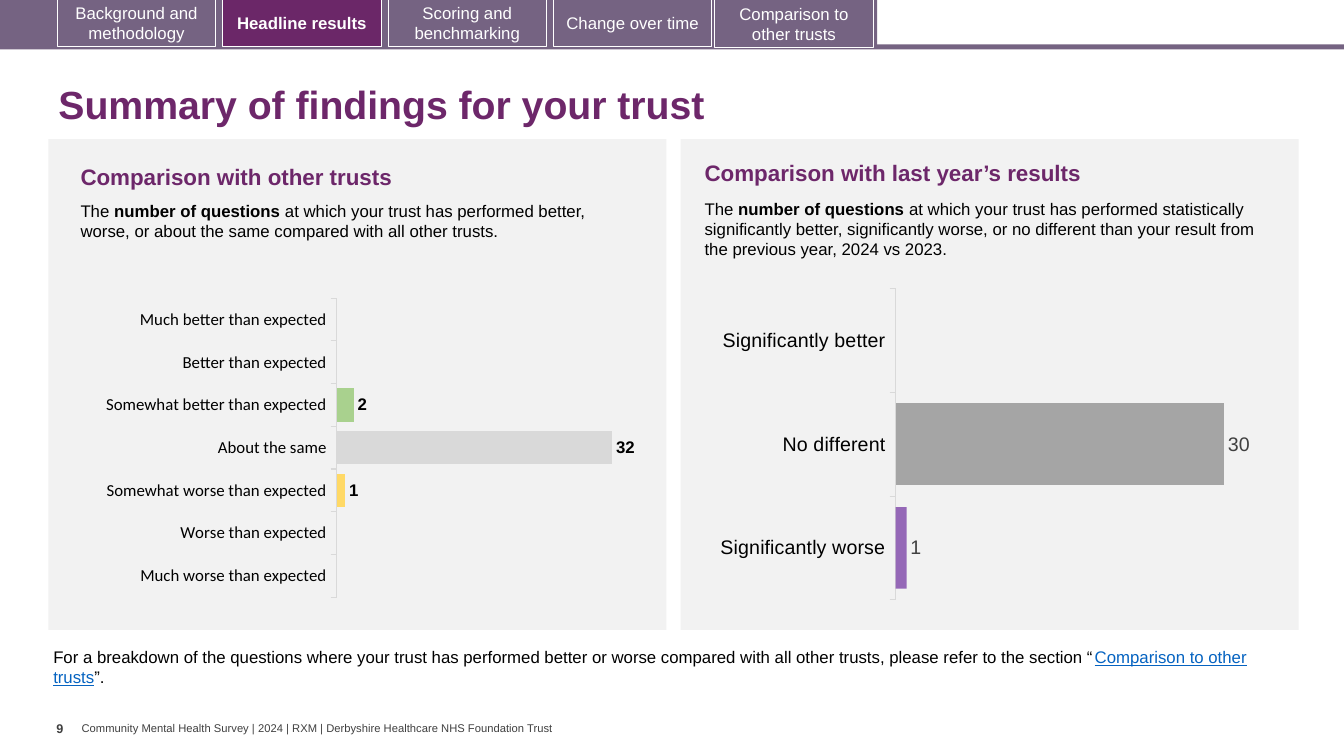
import pptx
import pptx.chart.data
import pptx.dml.color
import pptx.enum.chart
import pptx.enum.shapes
import pptx.enum.text
import pptx.util
from lxml import etree

Inches = pptx.util.Inches
Pt = pptx.util.Pt
Anchor = pptx.enum.text.MSO_ANCHOR
Align = pptx.enum.text.PP_ALIGN

THEME = {
    "colors": {
        "plum": "6D276A", "active_tab": "6B2768", "tab": "756382", "panel": "F2F2F2",
        "text": "000000", "muted": "404040", "white": "FFFFFF", "link": "0563C1",
        "axis": "D9D9D9", "series": "4472C4",
    },
    "fonts": {
        "title": {"size": Pt(28), "bold": True, "color": "plum"},
        "heading": {"size": Pt(16), "bold": True, "color": "plum"},
        "body": {"size": Pt(12), "color": "text"},
        "strong": {"size": Pt(12), "bold": True, "color": "text"},
        "link": {"size": Pt(12), "underline": True, "color": "link"},
        "tab": {"size": Pt(12), "color": "white"},
        "active_tab": {"size": Pt(12), "bold": True, "color": "white"},
        "footer": {"size": Pt(8), "color": "muted"},
        "page": {"size": Pt(9), "bold": True, "color": "muted"},
        "calibri_axis": {"size": Pt(12), "name": "Calibri", "color": "text"},
        "large_axis": {"size": Pt(14), "color": "text"},
        "large_label": {"size": Pt(14), "color": "muted"},
    },
}


def set_values(target, values):
    for name, value in values.items():
        setattr(target, name, value)


class SlideBuilder:
    def __init__(self, presentation, theme):
        self.theme = theme
        self.slide = presentation.slides.add_slide(presentation.slide_layouts[5])

    def color(self, name):
        return pptx.dml.color.RGBColor.from_string(self.theme["colors"].get(name, name))

    def style(self, font, name):
        values = {"name": "Arial", "bold": False, **self.theme["fonts"][name]}
        font.color.rgb = self.color(values.pop("color"))
        set_values(font, values)

    def fill_text(self, frame, runs, align=Align.LEFT, spacing=None, **frame_values):
        set_values(frame, {"word_wrap": True, "vertical_anchor": Anchor.TOP, **frame_values})
        paragraph = frame.paragraphs[0]
        set_values(paragraph, {"alignment": align, "line_spacing": spacing})
        for text, font_name in runs:
            run = paragraph.add_run()
            run.text = text
            self.style(run.font, font_name)

    def title(self, box, text):
        shape = self.slide.shapes.title
        set_values(shape, dict(zip(("left", "top", "width", "height"), map(Inches, box))))
        self.fill_text(shape.text_frame, [(text, "title")], spacing=0.9,
                       vertical_anchor=Anchor.MIDDLE,
                       auto_size=pptx.enum.text.MSO_AUTO_SIZE.NONE)

    def text(self, box, runs, **frame_values):
        shape = self.slide.shapes.add_textbox(*map(Inches, box))
        self.fill_text(shape.text_frame, runs, **frame_values)

    def rectangle(self, box, fill, outline=None):
        shape = self.slide.shapes.add_shape(
            pptx.enum.shapes.MSO_SHAPE.RECTANGLE, *map(Inches, box))
        shape.shadow.inherit = False
        shape.fill.solid()
        shape.fill.fore_color.rgb = self.color(fill)
        if outline:
            shape.line.color.rgb = self.color(outline)
            shape.line.width = Pt(0.75)
        else:
            shape.line.fill.background()
        return shape

    def tab(self, left, top, label, active=False):
        style_name = "active_tab" if active else "tab"
        shape = self.rectangle((left, top, 1.57, 0.47), style_name, "white")
        self.fill_text(shape.text_frame, [(label, style_name)], Align.CENTER,
                       vertical_anchor=Anchor.MIDDLE)

    def bar_chart(self, box, bars, plot_box, axis_font, label_font):
        data = pptx.chart.data.CategoryChartData()
        data.categories = [category for category, *_ in bars]
        data.add_series("Series 1", [value for _, value, *_ in bars])
        chart = self.slide.shapes.add_chart(
            pptx.enum.chart.XL_CHART_TYPE.BAR_CLUSTERED, *map(Inches, box), data).chart
        set_values(chart, {"has_legend": False, "has_title": False})
        self.style(chart.font, axis_font)

        set_values(chart.value_axis, {
            "minimum_scale": 0, "maximum_scale": 35,
            "has_major_gridlines": False, "visible": False})
        axis = chart.category_axis
        set_values(axis, {
            "reverse_order": True, "has_major_gridlines": False,
            "major_tick_mark": pptx.enum.chart.XL_TICK_MARK.OUTSIDE})
        axis.format.line.color.rgb = self.color("axis")
        axis.format.line.width = Pt(0.75)
        self.style(axis.tick_labels.font, axis_font)

        plot = chart.plots[0]
        set_values(plot, {"gap_width": 27, "vary_by_categories": False})
        series = plot.series[0]
        series.format.fill.solid()
        series.format.fill.fore_color.rgb = self.color("series")
        for index, (_, _, color, *alpha) in enumerate(bars):
            fill = series.points[index].format.fill
            fill.solid()
            fill.fore_color.rgb = self.color(color)
            if alpha:
                color_element = chart.element.xpath(".//c:dPt//a:srgbClr")[-1]
                etree.SubElement(color_element, pptx.oxml.ns.qn("a:alpha"),
                                 val=str(alpha[0] * 1000))
        labels = series.data_labels
        set_values(labels, {
            "show_value": True, "number_format": "0", "number_format_is_linked": False,
            "position": pptx.enum.chart.XL_LABEL_POSITION.OUTSIDE_END})
        self.style(labels.font, label_font)
        self.place_plot(chart, plot_box)

    def place_plot(self, chart, plot_box):
        qn = pptx.oxml.ns.qn
        plot_area = chart.element.xpath(".//c:plotArea")[0]
        for layout in plot_area.findall(qn("c:layout")):
            plot_area.remove(layout)
        layout = etree.Element(qn("c:layout"))
        plot_area.insert(0, layout)
        manual = etree.SubElement(layout, qn("c:manualLayout"))
        settings = [("layoutTarget", "inner"), ("xMode", "edge"), ("yMode", "edge"),
                    *zip("xywh", plot_box)]
        for name, value in settings:
            etree.SubElement(manual, qn(f"c:{name}"), val=str(value))


def main():
    presentation = pptx.Presentation()
    set_values(presentation, {"slide_width": Inches(13.33), "slide_height": Inches(7.5)})
    page = SlideBuilder(presentation, THEME)

    page.text((0.81, 7.16, 4.73, 0.13),
              [("Community Mental Health Survey | 2024 | RXM | "
                "Derbyshire Healthcare NHS Foundation Trust", "footer")],
              word_wrap=False, vertical_anchor=Anchor.MIDDLE,
              margin_left=0, margin_right=0, margin_top=0, margin_bottom=0)
    page.rectangle((0, 0.44, 13.33, 0.05), "tab")
    page.rectangle((0, 0, 8.7, 0.47), "tab")
    tabs = ["Background and methodology", "Headline results",
            "Scoring and benchmarking", "Change over time"]
    for index, label in enumerate(tabs):
        page.tab(0.57 + 1.64 * index, -0.01, label, label == "Headline results")
    page.tab(7.09, 0, "Comparison to other trusts")

    page.title((0.48, 0.7, 12.49, 0.72), "Summary of findings for your trust")
    for left in (0.48, 6.75):
        page.rectangle((left, 1.38, 6.13, 4.87), "panel")

    page.text((0.7, 1.57, 5.52, 0.37), [("Comparison with other trusts", "heading")])
    page.text((0.7, 1.94, 5.29, 0.71), [
        ("The ", "body"), ("number of questions ", "strong"),
        ("at which your trust has performed better, worse, or about the same "
         "compared with all other trusts.", "body")])
    page.bar_chart((0.41, 2.72, 6.23, 3.41), [
        ("Much better than expected", None, "419999"),
        ("Better than expected", None, "5FBD83"),
        ("Somewhat better than expected", 2, "A9D18E"),
        ("About the same", 32, "D9D9D9"),
        ("Somewhat worse than expected", 1, "FFD966"),
        ("Worse than expected", None, "F1BE48"),
        ("Much worse than expected", None, "E87722"),
    ], (0.47, 0.07, 0.48, 0.87), "calibri_axis", "strong")

    page.text((6.89, 1.53, 5.48, 0.37), [("Comparison with last year’s results", "heading")])
    page.text((6.89, 1.92, 5.74, 0.71), [
        ("The ", "body"), ("number of questions ", "strong"),
        ("at which your trust has performed statistically significantly better, "
         "significantly worse, or no different than your result from the previous year, "
         "2024 vs 2023.", "body")])
    page.bar_chart((6.64, 2.73, 6.23, 3.39), [
        ("Significantly better", None, "9DC3E6"),
        ("No different", 30, "A5A5A5"),
        ("Significantly worse", 1, "7030A0", 71),
    ], (0.36, 0.04, 0.61, 0.91), "large_axis", "large_label")

    page.text((0.43, 6.37, 12.21, 0.5), [
        ("For a breakdown of the questions where your trust has performed better or worse "
         "compared with all other trusts, please refer to the section “", "body"),
        ("Comparison to other trusts", "link"), ("”.", "body")])
    page.text((0.56, 7.1, 0.25, 0.4), [("9", "page")], word_wrap=False,
              margin_left=0, margin_right=0)
    presentation.save("out.pptx")


if __name__ == "__main__":
    main()
